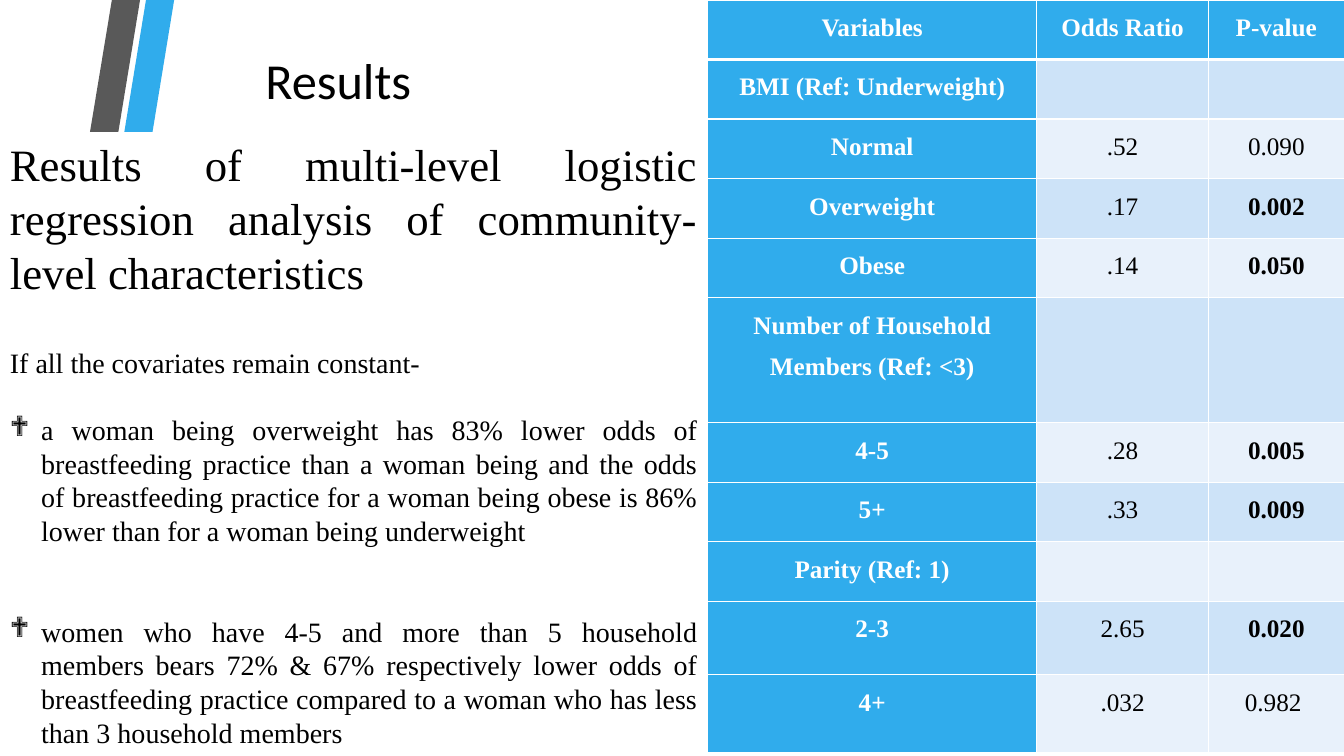
import pptx
import pptx.dml.color
import pptx.enum.text
import pptx.oxml
import pptx.oxml.ns
import pptx.util

Cm = pptx.util.Cm
Pt = pptx.util.Pt
RGBColor = pptx.dml.color.RGBColor
ALIGN = pptx.enum.text.PP_ALIGN
ANCHOR = pptx.enum.text.MSO_ANCHOR

BLUE = RGBColor(0x30, 0xAC, 0xEC)
GREY = RGBColor(0x59, 0x59, 0x59)
BAND_DARK = RGBColor(0xCD, 0xE3, 0xF8)
BAND_LIGHT = RGBColor(0xE8, 0xF1, 0xFB)
WHITE = RGBColor(0xFF, 0xFF, 0xFF)
BLACK = RGBColor(0, 0, 0)
SERIF = "Times New Roman"

ODDS = [
    ("Variables", "Odds Ratio", "P-value"),
    ("BMI (Ref: Underweight)", "", ""),
    ("Normal", ".52", "0.090"),
    ("Overweight", ".17", "0.002"),
    ("Obese", ".14", "0.050"),
    ("Number of Household Members (Ref: <3)", "", ""),
    ("4-5", ".28", "0.005"),
    ("5+", ".33", "0.009"),
    ("Parity (Ref: 1)", "", ""),
    ("2-3", "2.65", "0.020"),
    ("4+", ".032", "0.982 "),
]
COLUMN_WIDTHS = [8.3, 4.32, 3.43]
ROW_HEIGHTS = [1.5] * 5 + [3.15] + [1.5] * 3 + [1.85, 1.96]

FINDINGS = [
    ("Results of multi-level logistic regression analysis of "
     "community-level characteristics", dict(size=32, align=ALIGN.JUSTIFY)),
    ("If all the covariates remain constant-", dict(before=33.6)),
    ("a woman being overweight has 83% lower odds of breastfeeding practice "
     "than a woman being and the odds of breastfeeding practice for a woman "
     "being obese is 86% lower than for a woman being underweight",
     dict(before=24, bullet="❖", align=ALIGN.JUSTIFY)),
    ("women who have 4-5 and more than 5 household members bears 72% & 67% "
     "respectively lower odds of breastfeeding practice compared to a woman "
     "who has less than 3 household members",
     dict(before=48, bullet="❖", align=ALIGN.JUSTIFY)),
]


def write(paragraph, text, size=20, font=SERIF, color=BLACK, bold=False,
          align=ALIGN.LEFT, spacing=1.0, before=0, bullet=None):
    """Put one formatted run into a paragraph."""
    paragraph.alignment = align
    paragraph.line_spacing = spacing
    paragraph.space_before = Pt(before)
    run = paragraph.add_run()
    run.text = text
    run.font.size = Pt(size)
    run.font.name = font
    run.font.bold = bold
    run.font.color.rgb = color
    if bullet:
        properties = paragraph._p.get_or_add_pPr()
        properties.set("marL", str(Cm(0.79)))
        properties.set("indent", str(-Cm(0.79)))
        for tag, attributes in (("a:buFont", {"typeface": "Wingdings"}),
                                ("a:buChar", {"char": bullet})):
            properties.append(properties.makeelement(pptx.oxml.ns.qn(tag), attributes))


class ResultsSlide:
    """Style and drawing methods for the current slide."""

    def __init__(self, slide):
        self.slide = slide
        self.shapes = slide.shapes

    def stripe(self, points, color):
        corners = [(Cm(x), Cm(y)) for x, y in points]
        builder = self.shapes.build_freeform(*corners[0])
        builder.add_line_segments(corners[1:], close=True)
        self.plain(builder.convert_to_shape(), color)

    def plain(self, shape, color):
        shape.shadow.inherit = False
        shape.fill.solid()
        shape.fill.fore_color.rgb = color
        shape.line.fill.background()

    def text(self, box, paragraphs, anchor=ANCHOR.TOP, fill=None):
        shape = self.shapes.add_textbox(*map(Cm, box))
        if fill is not None:
            self.plain(shape, fill)
        frame = shape.text_frame
        frame.word_wrap = True
        frame.vertical_anchor = anchor
        for number, (content, style) in enumerate(paragraphs):
            paragraph = frame.add_paragraph() if number else frame.paragraphs[0]
            write(paragraph, content, **style)

    def border(self, cell, side, points):
        line = pptx.oxml.parse_xml(
            f'<a:ln{side} {pptx.oxml.ns.nsdecls("a")} w="{Pt(points)}">'
            f'<a:solidFill><a:srgbClr val="{WHITE}"/></a:solidFill></a:ln{side}>')
        cell._tc.get_or_add_tcPr().append(line)

    def table(self, left, top, widths, heights, rows):
        table = self.shapes.add_table(
            len(rows), len(widths), Cm(left), Cm(top),
            Cm(sum(widths)), Cm(sum(heights))).table
        for column, width in zip(table.columns, widths):
            column.width = Cm(width)
        for row, height in zip(table.rows, heights):
            row.height = Cm(height)
        for r, row in enumerate(rows):
            for c, content in enumerate(row):
                self.cell(table.cell(r, c), r, c, content)

    def cell(self, cell, r, c, content):
        heading = r == 0 or c == 0
        # The rule under the header row is thicker
        for side, points in (("L", 1), ("R", 1), ("T", 3 if r == 1 else 1),
                             ("B", 3 if r == 0 else 1)):
            self.border(cell, side, points)
        cell.fill.solid()
        band = BAND_DARK if r % 2 else BAND_LIGHT
        cell.fill.fore_color.rgb = BLUE if heading else band
        cell.margin_left = cell.margin_right = Cm(0.18)
        cell.margin_top = cell.margin_bottom = 0
        if content:
            significant = c == 2 and not heading and float(content) <= 0.05
            write(cell.text_frame.paragraphs[0], content, size=18,
                  color=WHITE if heading else BLACK,
                  bold=heading or significant, align=ALIGN.CENTER, spacing=1.5)


def main():
    deck = pptx.Presentation()
    deck.slide_width, deck.slide_height = Cm(33.87), Cm(19.05)
    page = ResultsSlide(deck.slides.add_slide(deck.slide_layouts[6]))

    # Slanted stripes, partly covered by the findings panel
    page.stripe([(1.27, 14.68), (1.96, 14.81), (4.39, 0), (3.68, 0)], BLUE)
    page.stripe([(3.53, 0), (2.82, 0), (0.41, 14.55), (1.12, 14.66)], GREY)

    # Title and findings
    page.text((5.26, 1.14, 6.53, 1.73),
              [("Results", dict(size=36, font="Calibri", align=ALIGN.CENTER))],
              anchor=ANCHOR.MIDDLE)
    page.text((0, 3.33, 17.83, 15.82), FINDINGS, fill=WHITE)

    # Odds ratios
    page.table(17.83, 0, COLUMN_WIDTHS, ROW_HEIGHTS, ODDS)

    deck.save("out.pptx")


if __name__ == "__main__":
    main()
